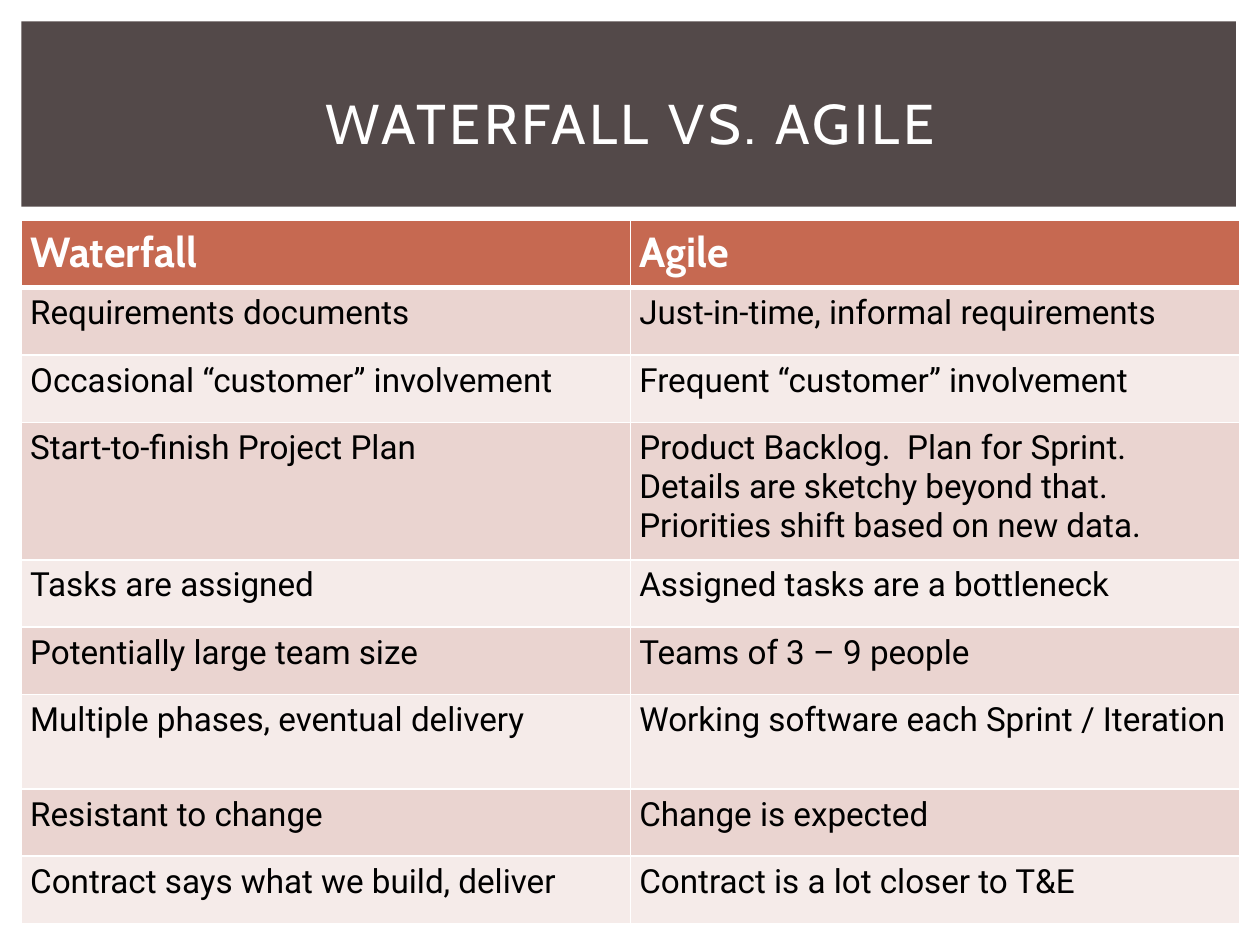
import pptx
import pptx.dml.color
import pptx.enum.shapes
import pptx.enum.text
import pptx.oxml
import pptx.oxml.ns
import pptx.util

Inches = pptx.util.Inches
Pt = pptx.util.Pt

COLORS = {
    "banner": "534949",
    "header": "C66951",
    "odd": "EAD4D0",
    "even": "F5EBE9",
    "light": "FFFFFF",
    "dark": "000000",
}

TITLE_FONT = {"name": "Cabin", "size": Pt(32), "bold": False}
HEADER_FONT = {"name": "Cabin", "size": Pt(24), "bold": True}
BODY_FONT = {"name": "Roboto", "size": Pt(19), "bold": False}
CELL_FORMAT = {
    "margin_left": Inches(0.07),
    "margin_right": Inches(0.07),
    "margin_top": Inches(0.05),
    "margin_bottom": Inches(0.05),
    "vertical_anchor": pptx.enum.text.MSO_ANCHOR.TOP,
}

COMPARISON = [
    ("Waterfall", "Agile"),
    ("Requirements documents", "Just-in-time, informal requirements"),
    ("Occasional “customer” involvement", "Frequent “customer” involvement"),
    ("Start-to-finish Project Plan",
     "Product Backlog.  Plan for Sprint.\vDetails are sketchy beyond that.\v"
     "Priorities shift based on new data."),
    ("Tasks are assigned", "Assigned tasks are a bottleneck"),
    ("Potentially large team size", "Teams of 3 – 9 people"),
    ("Multiple phases, eventual delivery", "Working software each Sprint / Iteration"),
    ("Resistant to change", "Change is expected"),
    ("Contract says what we build, deliver", "Contract is a lot closer to T&E"),
]
TALL_ROWS = {3: 1.09, 6: 0.75}


def color(key):
    return pptx.dml.color.RGBColor.from_string(COLORS[key])


def apply(target, values):
    for name, value in values.items():
        setattr(target, name, value)


def format_text(frame, font, color_key):
    for para in frame.paragraphs:
        for span in para.runs:
            apply(span.font, font)
            span.font.color.rgb = color(color_key)


def set_borders(cell, widths):
    """Give the cell solid borders; widths maps side to points."""
    props = cell._tc.get_or_add_tcPr()
    for position, (side, width) in enumerate(widths.items()):
        props.insert(position, pptx.oxml.parse_xml(
            f'<a:{side} {pptx.oxml.ns.nsdecls("a")} w="{Pt(width)}"><a:solidFill>'
            f'<a:srgbClr val="{COLORS["light"]}"/></a:solidFill></a:{side}>'))


def add_banner(page, left, top, width, height):
    # Dark band, placed behind the title
    band = page.shapes.add_shape(
        pptx.enum.shapes.MSO_SHAPE.RECTANGLE,
        Inches(left), Inches(top), Inches(width), Inches(height))
    band.shadow.inherit = False
    band.fill.solid()
    band.fill.fore_color.rgb = color("banner")
    band.line.fill.background()

    # Title with widely spaced letters
    title = page.shapes.title
    title.element.addprevious(band.element)
    apply(title, {
        "left": Inches(left + 0.25), "top": Inches(top + 0.22),
        "width": Inches(width - 0.47), "height": Inches(height - 0.32),
    })
    frame = title.text_frame
    frame.text = "WATERFALL VS. AGILE"
    apply(frame, {"word_wrap": True,
                  "vertical_anchor": pptx.enum.text.MSO_ANCHOR.MIDDLE})
    para = frame.paragraphs[0]
    para.alignment = pptx.enum.text.PP_ALIGN.CENTER
    format_text(frame, TITLE_FONT, "light")
    para.runs[0].font._element.set("spc", "200")


def add_comparison(page, left, top, width, height):
    count = len(COMPARISON)
    table = page.shapes.add_table(
        count, 2, Inches(left), Inches(top), Inches(width), Inches(height)).table
    for column in table.columns:
        column.width = Inches(width / 2)

    # Rows share whatever height the tall ones leave
    normal = (height - sum(TALL_ROWS.values())) / (count - len(TALL_ROWS))
    for index, texts in enumerate(COMPARISON):
        table.rows[index].height = Inches(TALL_ROWS.get(index, normal))
        header = index == 0
        fill = "header" if header else ("odd" if index % 2 else "even")
        for column, text in enumerate(texts):
            cell = table.cell(index, column)
            cell.text_frame.text = text
            apply(cell, CELL_FORMAT)
            cell.fill.solid()
            cell.fill.fore_color.rgb = color(fill)
            format_text(cell.text_frame, HEADER_FONT if header else BODY_FONT,
                        "light" if header else "dark")
            set_borders(cell, {"lnL": 1, "lnR": 1,
                               "lnT": 3 if index == 1 else 1,
                               "lnB": 3 if header else 1})


def main():
    deck = pptx.Presentation()
    deck.slide_width, deck.slide_height = Inches(10), Inches(7.5)
    page = deck.slides.add_slide(deck.slide_layouts[5])
    add_banner(page, 0.17, 0.17, 9.64, 1.47)
    add_comparison(page, 0.17, 1.75, 9.67, 5.58)
    deck.save("out.pptx")


if __name__ == "__main__":
    main()
